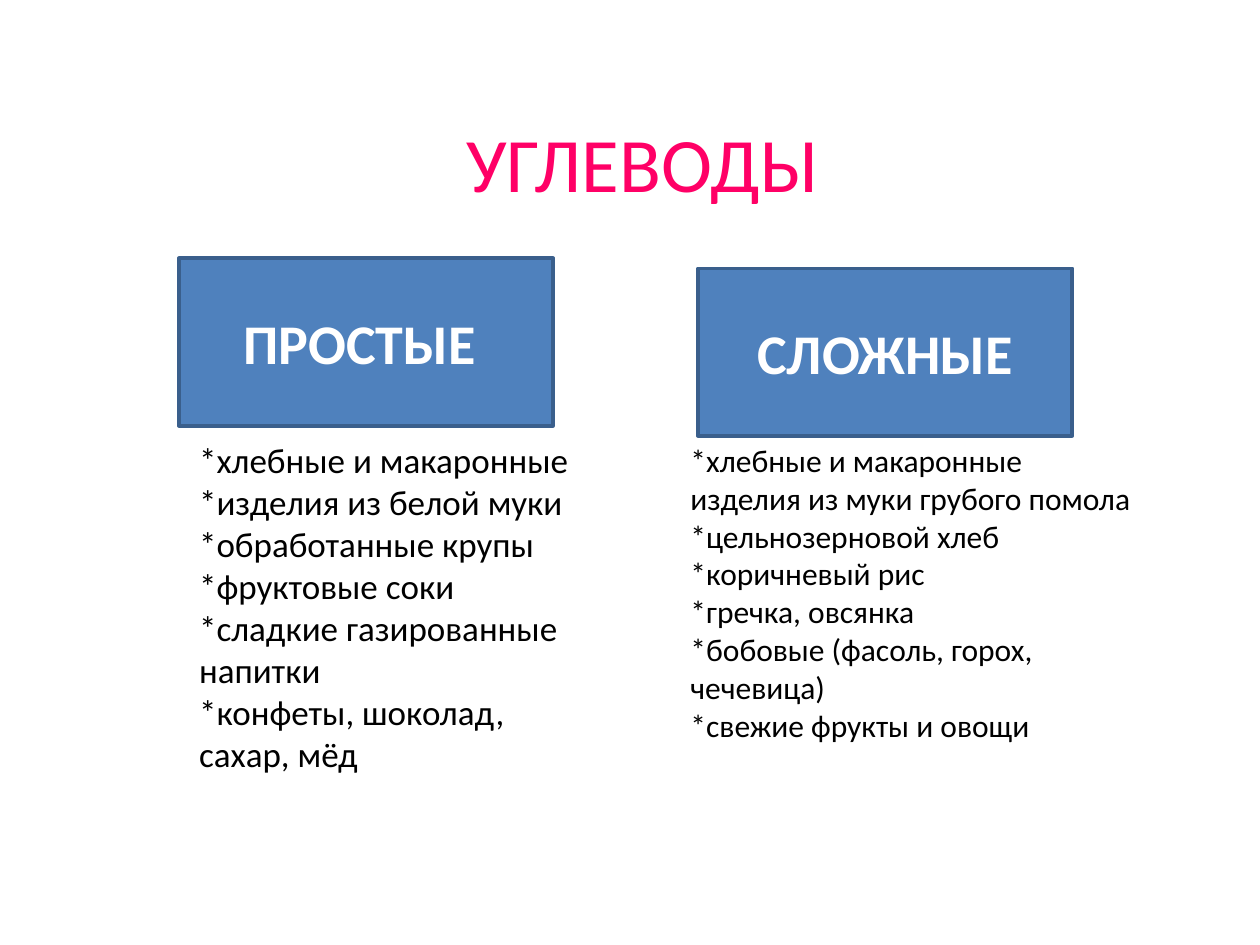
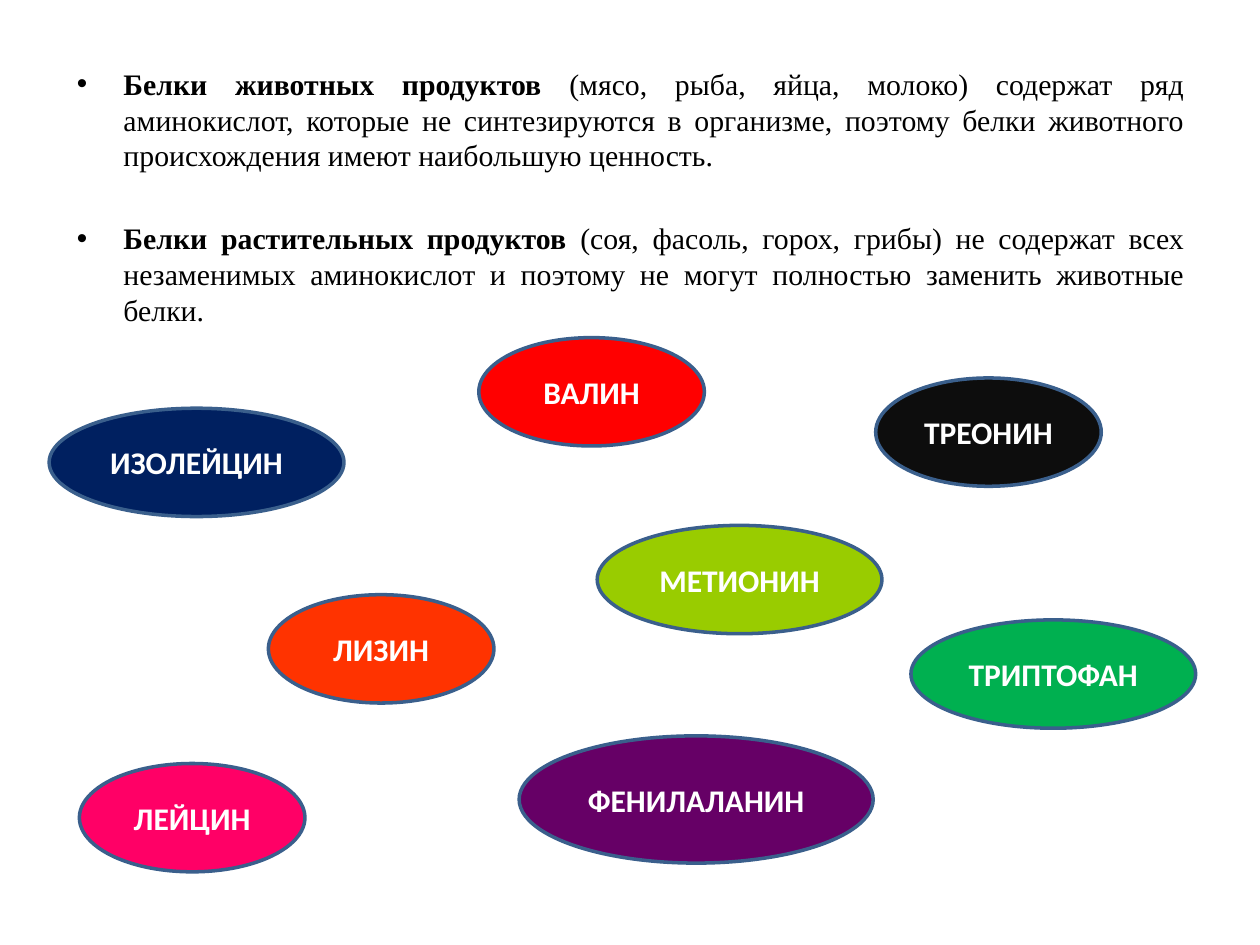
from lxml import etree
from pptx import Presentation
from pptx.dml.color import RGBColor
from pptx.enum.shapes import MSO_SHAPE
from pptx.enum.text import MSO_ANCHOR, MSO_AUTO_SIZE, PP_ALIGN
from pptx.oxml.ns import qn
from pptx.util import Inches, Pt

RECTANGLE, OVAL = MSO_SHAPE.RECTANGLE, MSO_SHAPE.OVAL
TOP, MIDDLE = MSO_ANCHOR.TOP, MSO_ANCHOR.MIDDLE
LEFT, CENTER, JUSTIFY = PP_ALIGN.LEFT, PP_ALIGN.CENTER, PP_ALIGN.JUSTIFY
TWO_CONTENT_LAYOUT, CONTENT_LAYOUT = 3, 1

COLORS = {
    "pink": "FF0066", "black": "000000", "white": "FFFFFF",
    "blue": "4F81BD", "outline": "3A5F8C", "red": "FF0000",
    "navy": "002060", "lime": "99CC00", "green": "00B050",
    "purple": "660066", "near_black": "0D0D0D", "orange": "FF3300",
}

CARBS_TITLE = "УГЛЕВОДЫ"
CARB_GROUPS = [
    {"heading": "ПРОСТЫЕ ", "heading_at": (1.42, 2.05),
     "list_at": (1.48, 3.43, 3.32, 2.77), "size": 20,
     "foods": ["*хлебные и макаронные *изделия из белой муки",
               "*обработанные крупы",
               "*фруктовые соки",
               "*сладкие газированные напитки",
               "*конфеты, шоколад, сахар, мёд"]},
    {"heading": "СЛОЖНЫЕ", "heading_at": (5.54, 2.13),
     "list_at": (5.38, 3.45, 3.75, 2.5), "size": 18,
     "foods": ["*хлебные и макаронные изделия из муки грубого помола",
               "*цельнозерновой хлеб *коричневый рис",
               "*гречка, овсянка",
               "*бобовые (фасоль, горох, чечевица)",
               "*свежие фрукты и овощи"]},
]
HEADING_SIZE = (2.97, 1.33)

PROTEINS = [
    ("Белки животных продуктов",
     " (мясо, рыба, яйца, молоко) содержат ряд аминокислот, которые не "
     "синтезируются в организме, поэтому белки животного происхождения "
     "имеют наибольшую ценность."),
    ("Белки растительных продуктов",
     " (соя, фасоль, горох, грибы) не содержат всех незаменимых аминокислот "
     "и поэтому не могут полностью заменить животные белки. "),
]
PROTEIN_GAP = 27

SMALL, MEDIUM = (1.79, 0.86), (2.26, 0.86)
AMINO_ACIDS = [
    ("ВАЛИН", "red", (3.8, 2.68), SMALL),
    ("ИЗОЛЕЙЦИН", "navy", (0.39, 3.24), (2.34, 0.86)),
    ("ЛЕЙЦИН", "pink", (0.63, 6.06), SMALL),
    ("МЕТИОНИН", "lime", (4.74, 4.17), MEDIUM),
    ("ТРИПТОФАН", "green", (7.23, 4.92), MEDIUM),
    ("ФЕНИЛАЛАНИН", "purple", (4.12, 5.84), (2.81, 1.01)),
    ("ТРЕОНИН", "near_black", (6.95, 3), SMALL),
    ("ЛИЗИН", "orange", (2.13, 4.72), SMALL),
]


def rgb(name):
    return RGBColor.from_string(COLORS[name])


def apply(target, formats):
    for attribute, value in formats.items():
        setattr(target, attribute, value)


def style_font(font, size, color, name="Calibri", bold=False):
    apply(font, {"size": Pt(size), "name": name, "bold": bold})
    font.color.rgb = rgb(color)


def place(placeholder, left, top, width, height, wrap=True):
    """Move a placeholder and make its text start at the top."""
    apply(placeholder, {"left": Inches(left), "top": Inches(top),
                        "width": Inches(width), "height": Inches(height)})
    apply(placeholder.text_frame, {"word_wrap": wrap, "vertical_anchor": TOP,
                                   "auto_size": MSO_AUTO_SIZE.NONE})
    return placeholder.text_frame


def set_bullet(paragraph, char=None, margin=0, indent=0):
    props = paragraph._p.get_or_add_pPr()
    props.set("marL", str(Inches(margin)))
    props.set("indent", str(Inches(indent)))
    if char:
        font = etree.SubElement(props, qn("a:buFont"))
        font.set("typeface", "Arial")
        etree.SubElement(props, qn("a:buChar")).set("char", char)
    else:
        etree.SubElement(props, qn("a:buNone"))


def paragraphs_for(frame, items):
    """Yield each item with its own paragraph, starting with the first one."""
    for index, item in enumerate(items):
        yield item, frame.add_paragraph() if index else frame.paragraphs[0]


def add_label(slide, kind, text, fill, at, size, font_size):
    label = slide.shapes.add_shape(kind, *map(Inches, at + size))
    label.shadow.inherit = False
    label.fill.solid()
    label.fill.fore_color.rgb = rgb(fill)
    label.line.color.rgb = rgb("outline")
    label.line.width = Pt(2)
    apply(label.text_frame, {"word_wrap": True, "vertical_anchor": MIDDLE})
    paragraph = label.text_frame.paragraphs[0]
    paragraph.text = text
    paragraph.alignment = CENTER
    style_font(paragraph.font, font_size, "white", bold=True)


def build_carbs(deck):
    slide = deck.slides.add_slide(deck.slide_layouts[TWO_CONTENT_LAYOUT])
    title, *lists = slide.placeholders
    paragraph = place(title, 3.6, 0.87, 3.2, 1.1).paragraphs[0]
    paragraph.text = CARBS_TITLE
    paragraph.alignment = LEFT
    style_font(paragraph.font, 44, "pink")

    for group, food_list in zip(CARB_GROUPS, lists):
        frame = place(food_list, *group["list_at"])
        for food, paragraph in paragraphs_for(frame, group["foods"]):
            paragraph.text = food
            paragraph.space_before = Pt(0)
            set_bullet(paragraph)
            style_font(paragraph.font, group["size"], "black")
        add_label(slide, RECTANGLE, group["heading"], "blue",
                  group["heading_at"], HEADING_SIZE, 32)


def build_proteins(deck):
    slide = deck.slides.add_slide(deck.slide_layouts[CONTENT_LAYOUT])
    title, body = slide.placeholders
    title.element.getparent().remove(title.element)

    frame = place(body, 0.5, 0.47, 9, 6.23)
    for (term, description), paragraph in paragraphs_for(frame, PROTEINS):
        first = term == PROTEINS[0][0]
        apply(paragraph, {"alignment": JUSTIFY,
                          "space_before": Pt(0 if first else PROTEIN_GAP)})
        set_bullet(paragraph, "•", 0.38, -0.37)
        for text, bold in ((term, True), (description, False)):
            run = paragraph.add_run()
            run.text = text
            style_font(run.font, 17, "black", "Times New Roman", bold)

    for name, fill, at, size in AMINO_ACIDS:
        add_label(slide, OVAL, name, fill, at, size, 18)


def main():
    deck = Presentation()
    apply(deck, {"slide_width": Inches(10), "slide_height": Inches(7.5)})
    build_carbs(deck)
    build_proteins(deck)
    deck.save("out.pptx")


if __name__ == "__main__":
    main()
